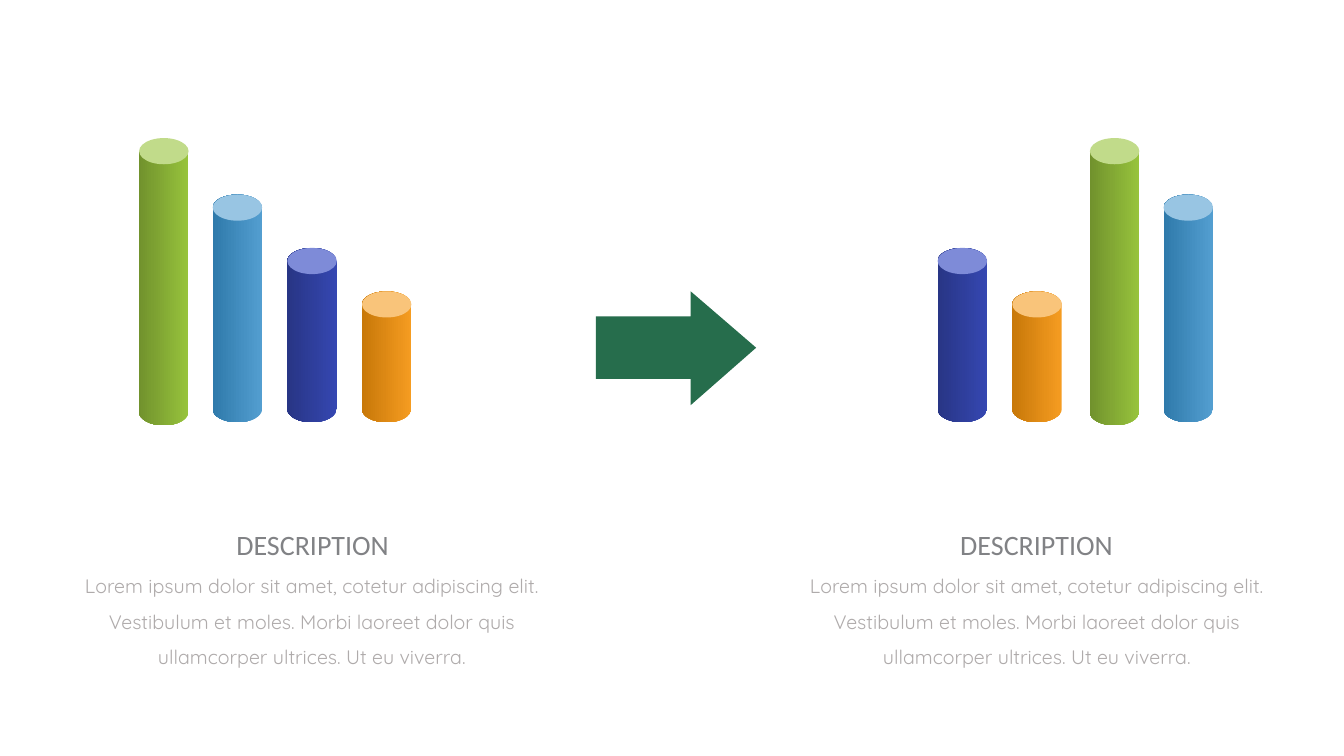
from lxml import etree
from pptx import Presentation
from pptx.dml.color import RGBColor
from pptx.enum import shapes, text
from pptx.oxml.ns import qn
from pptx.util import Inches, Pt

# Each bar colour: light side, dark side, lid
COLORS = {
    "green": ("97C33C", "71922D", "C1DB8A"),
    "sky": ("539ED0", "2F7AAB", "98C5E3"),
    "indigo": ("3547B1", "283585", "7E8BD8"),
    "orange": ("F59C21", "C87809", "F9C47A"),
    "arrow": "266D4C",
    "heading": "818285",
    "body": "AFABAB",
}
# Each bar: lid top, body top, bottom
BARS = {
    "green": (1.37, 1.41, 4.22),
    "sky": (1.93, 1.93, 4.19),
    "indigo": (2.46, 2.46, 4.19),
    "orange": (2.89, 2.89, 4.19),
}
BAR_WIDTH = 0.49
LID_HEIGHT = 0.26
CURVE = 0.55  # handle length of a quarter ellipse, as a share of its radius
ARROW = [(6.85, 2.89), (7.14, 3.14), (7.5, 3.45), (6.85, 4.02), (6.85, 3.76),
         (5.91, 3.76), (5.91, 3.14), (6.85, 3.14)]
LEFT_BARS = {"orange": 3.59, "indigo": 2.85, "sky": 2.11, "green": 1.38}
RIGHT_BARS = {"orange": 10.04, "indigo": 9.3, "sky": 11.54, "green": 10.81}
DESCRIPTION = ("Lorem ipsum dolor sit amet, cotetur adipiscing elit. "
               "Vestibulum et moles. Morbi laoreet dolor quis "
               "ullamcorper ultrices. Ut eu viverra.")


def rgb(value):
    return RGBColor.from_string(value)


def finish(shape, color):
    """Fill with one colour, without line or shadow."""
    shape.shadow.inherit = False
    shape.line.fill.background()
    shape.fill.solid()
    shape.fill.fore_color.rgb = rgb(color)


def add_outline(parent, points, color):
    corners = [(Inches(x), Inches(y)) for x, y in points]
    builder = parent.shapes.build_freeform(*corners[0])
    builder.add_line_segments(corners[1:], close=True)
    shape = builder.convert_to_shape()
    finish(shape, color)
    return shape


def round_ends(shape):
    """Turn a rectangular outline into one with half ellipses at both ends."""
    width, height = shape.width, shape.height
    middle, depth = width / 2, Inches(LID_HEIGHT / 2)
    reach_x, reach_y = middle * CURVE, depth * CURVE
    low = height - depth
    steps = [
        ("moveTo", [(width, depth)]),
        ("cubicBezTo", [(width, depth - reach_y), (middle + reach_x, 0), (middle, 0)]),
        ("cubicBezTo", [(middle - reach_x, 0), (0, depth - reach_y), (0, depth)]),
        ("lnTo", [(0, low)]),
        ("cubicBezTo", [(0, low + reach_y), (middle - reach_x, height), (middle, height)]),
        ("cubicBezTo", [(middle + reach_x, height), (width, low + reach_y), (width, low)]),
        ("close", []),
    ]
    outline = next(shape.element.iter(qn("a:path")))
    for child in list(outline):
        outline.remove(child)
    for kind, points in steps:
        step = etree.SubElement(outline, qn(f"a:{kind}"))
        for x, y in points:
            etree.SubElement(step, qn("a:pt"), x=str(round(x)), y=str(round(y)))


def add_bar(page, name, left):
    light, dark, lid_color = COLORS[name]
    lid_top, top, bottom = BARS[name]
    right = left + BAR_WIDTH
    bar = page.shapes.add_group_shape()
    body = add_outline(bar, [(left, top), (right, top), (right, bottom), (left, bottom)], light)
    round_ends(body)
    body.fill.gradient()
    body.fill.gradient_angle = 180
    for stop, color, position in zip(body.fill.gradient_stops, (light, dark), (0, 1)):
        stop.color.rgb = rgb(color)
        stop.position = position
    lid = bar.shapes.add_shape(
        shapes.MSO_SHAPE.OVAL, Inches(left), Inches(lid_top),
        Inches(BAR_WIDTH), Inches(LID_HEIGHT))
    finish(lid, lid_color)


def add_text(page, wording, place, font, size, color):
    box = page.shapes.add_textbox(*(Inches(length) for length in place))
    frame = box.text_frame
    frame.word_wrap = True
    frame.vertical_anchor = text.MSO_ANCHOR.MIDDLE
    para = frame.paragraphs[0]
    para.text = wording
    para.alignment = text.PP_ALIGN.CENTER
    para.line_spacing = 1.5
    para.font.name = font
    para.font.size = Pt(size)
    para.font.color.rgb = rgb(color)


def add_caption(page, body_left, heading_left):
    add_text(page, DESCRIPTION, (body_left, 5.51, 5.03, 1.19),
             "Quicksand", 14, COLORS["body"])
    add_text(page, "DESCRIPTION", (heading_left, 5.02, 2.62, 0.59),
             "Calibri", 20, COLORS["heading"])


def main():
    deck = Presentation()
    deck.slide_width, deck.slide_height = Inches(13.33), Inches(7.5)
    page = deck.slides.add_slide(deck.slide_layouts[6])
    for group in (LEFT_BARS, RIGHT_BARS):
        for name, left in group.items():
            add_bar(page, name, left)
    add_outline(page, ARROW, COLORS["arrow"])
    add_caption(page, 0.58, 1.79)
    add_caption(page, 7.77, 8.97)
    deck.save("out.pptx")


if __name__ == "__main__":
    main()
